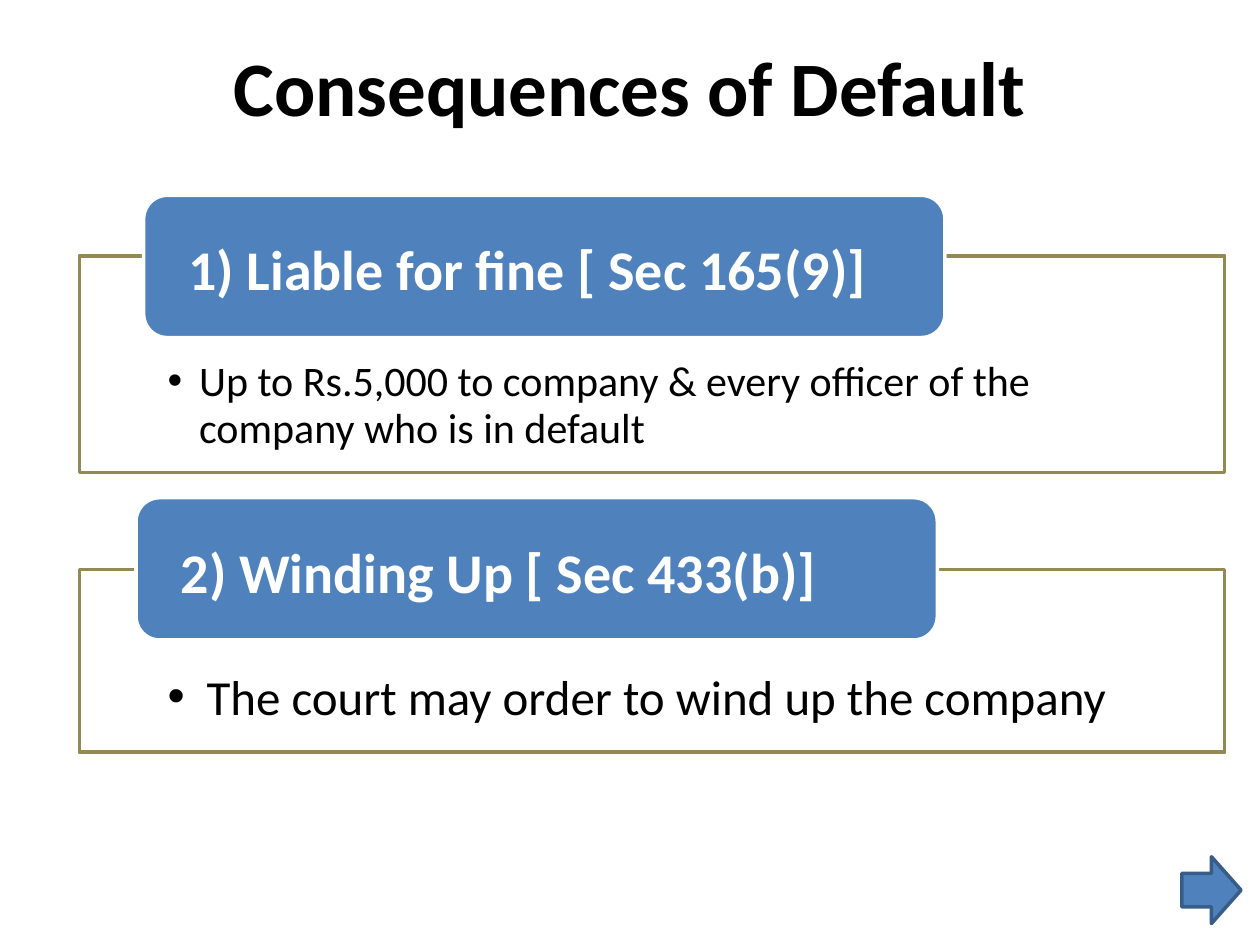
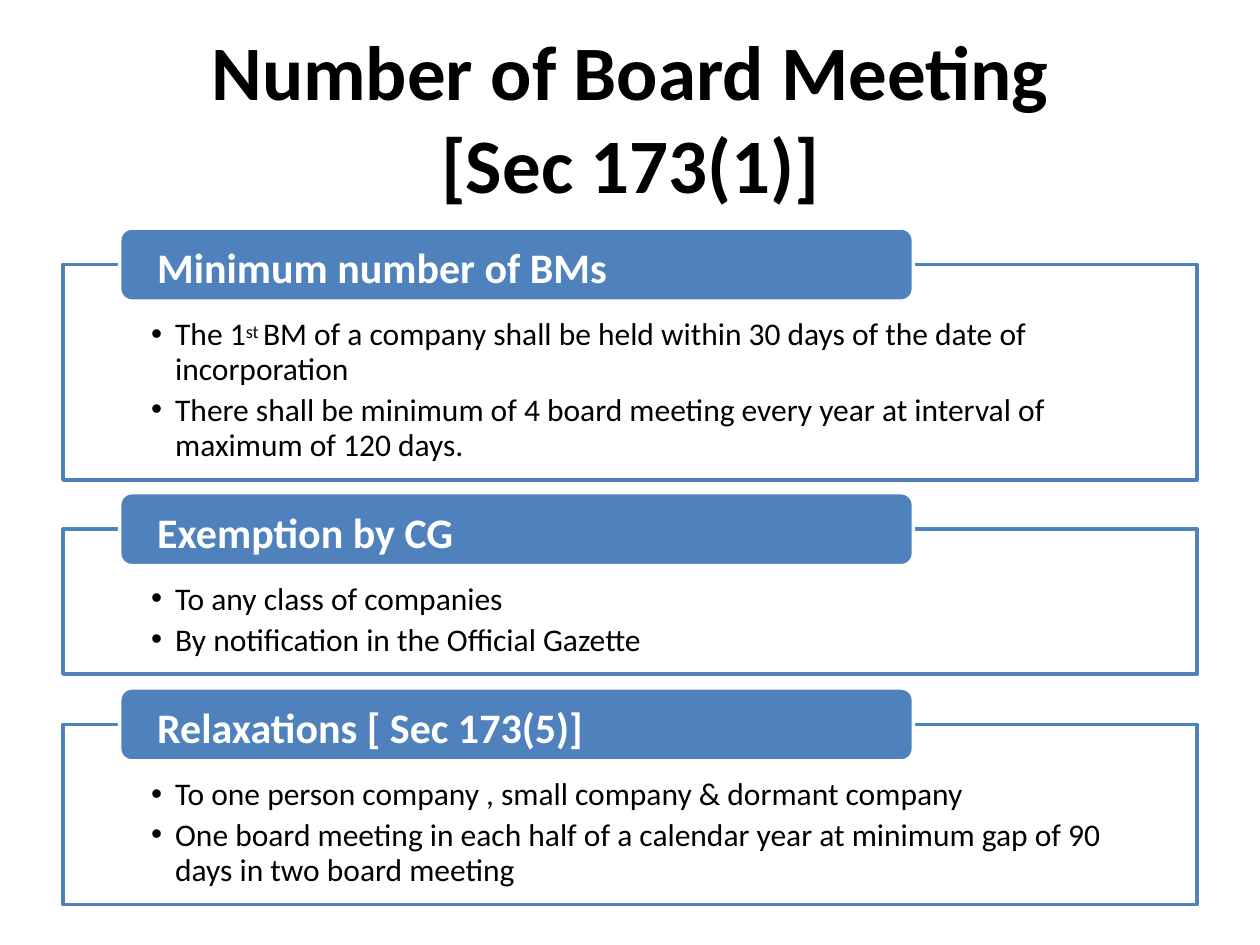
from lxml.etree import SubElement
from pptx import Presentation
from pptx.dml.color import RGBColor
from pptx.enum.shapes import MSO_SHAPE
from pptx.enum.text import MSO_ANCHOR, MSO_AUTO_SIZE, PP_ALIGN
from pptx.oxml.ns import qn
from pptx.util import Inches, Pt

BLUE = "4F81BC"
NAVY = "385D89"
OLIVE = "938953"
WHITE = "FFFFFF"
BLACK = "000000"
FONT = "Calibri"
EDGE = 2.04


def color(code):
    return RGBColor.from_string(code)


def place(shape, left, top, width, height):
    shape.left, shape.top = Inches(left), Inches(top)
    shape.width, shape.height = Inches(width), Inches(height)


def prepare(shape, left=0, top=0):
    frame = shape.text_frame
    frame.word_wrap = True
    frame.auto_size = MSO_AUTO_SIZE.NONE
    frame.vertical_anchor = MSO_ANCHOR.TOP
    frame.margin_left, frame.margin_top = Inches(left), Inches(top)
    frame.margin_right = frame.margin_bottom = 0
    return frame


def write(para, text, size=18, ink=BLACK, bold=False, align=PP_ALIGN.LEFT):
    para.alignment = align
    para.space_before = Pt(0)
    for count, part in enumerate(text.split("^")):
        para.add_line_break() if part == "\v" else None
        run = para.add_run()
        run.text = part
        run.font.name = FONT
        run.font.size = Pt(size)
        run.font.bold = bold
        run.font.color.rgb = color(ink)
        if count % 2:
            run.font._element.set("baseline", "25000")


def bullet(para, indent):
    props = para._p.get_or_add_pPr()
    props.set("marL", str(Inches(indent)))
    props.set("indent", str(-Inches(indent)))
    SubElement(props, qn("a:buFont")).set("typeface", "Arial")
    SubElement(props, qn("a:buChar")).set("char", "•")


def title(slide, lines, box):
    holder = slide.shapes.title
    place(holder, *box)
    frame = prepare(holder)
    for count, line in enumerate(lines):
        para = frame.add_paragraph() if count else frame.paragraphs[0]
        write(para, line, size=44, bold=True, align=PP_ALIGN.CENTER)


def draw(slide, kind, box, fill=None, edge=WHITE):
    shape = slide.shapes.add_shape(kind, *map(Inches, box))
    shape.shadow.inherit = False
    if fill:
        shape.fill.solid()
        shape.fill.fore_color.rgb = color(fill)
    else:
        shape.fill.background()
    shape.line.color.rgb = color(edge)
    shape.line.width = Pt(EDGE)
    return shape


def header(slide, text, box, size, left, top):
    shape = draw(slide, MSO_SHAPE.ROUNDED_RECTANGLE, box, fill=BLUE)
    frame = prepare(shape, left, top)
    write(frame.paragraphs[0], text, size=size, ink=WHITE, bold=True)


def fill_list(holder, items, box, size, indent, pitch):
    place(holder, *box)
    frame = prepare(holder)
    for count, item in enumerate(items):
        para = frame.add_paragraph() if count else frame.paragraphs[0]
        write(para, item, size=size)
        para.space_after = Pt(3.5)
        para.line_spacing = Pt(pitch) if pitch else 1.0
        bullet(para, indent)


def start(deck):
    slide = deck.slides.add_slide(deck.slide_layouts.get_by_name("Comparison"))
    return slide, list(slide.placeholders)[1:]


def discard(holders):
    for holder in holders:
        holder._element.getparent().remove(holder._element)


def default_slide(deck):
    slide, holders = start(deck)
    title(slide, ["Consequences of Default"], (1.84, 0.31, 6.32, 0.76))
    parts = [
        ("1) Liable for fine [ Sec 165(9)]",
         "Up to Rs.5,000 to company & every officer of the company who is in default",
         2.03, 1.72, (1.14, 1.55), 2.85, 24, 0.25, 26.4),
        ("2) Winding Up [ Sec 433(b)]",
         "The court may order to wind up the company",
         4.52, 1.45, (1.08, 3.95), 5.29, 28, 0.31, None),
    ]
    for holder, part in zip(holders, parts):
        head, item, top, height, corner, start_y, size, indent, pitch = part
        draw(slide, MSO_SHAPE.RECTANGLE, (0.63, top, 9.09, height), edge=OLIVE)
        header(slide, head, (*corner, 6.36, 1.13), 32, 0.3, 0.26)
        fill_list(holder, [item], (1.33, start_y, 7.7, 0.8), size, indent, pitch)
    discard(holders[len(parts):])
    draw(slide, MSO_SHAPE.RIGHT_ARROW, (9.38, 6.8, 0.47, 0.53), BLUE, NAVY)


def meeting_slide(deck):
    slide, holders = start(deck)
    title(slide, ["Number of Board Meeting", "[Sec 173(1)]"], (0.91, 0.19, 8.19, 1.5))
    parts = [
        ("Minimum number of BMs", 2.1, 1.71, [
            "The 1^st ^BM of a company shall be held within 30 days of the date of incorporation",
            "There shall be minimum of 4 board meeting every year at interval of maximum of 120 days.",
        ]),
        ("Exemption by CG", 4.2, 1.15, [
            "To any class of companies",
            "By notification in the Official Gazette",
        ]),
        ("Relaxations [ Sec 173(5)]", 5.75, 1.43, [
            "To one person company , small company & dormant company",
            "One board meeting in each half of a calendar year at minimum gap of 90 days in two board meeting",
        ]),
    ]
    for holder, (head, top, height, items) in zip(holders, parts):
        draw(slide, MSO_SHAPE.RECTANGLE, (0.5, top, 9, height), edge=BLUE)
        header(slide, head, (0.95, top - 0.29, 6.3, 0.58), 24, 0.27, 0.08)
        box = (1.2, top + 0.42, 7.7, height - 0.45)
        fill_list(holder, items, box, 18, 0.19, 19.8)
    discard(holders[len(parts):])


def main():
    deck = Presentation()
    deck.slide_width, deck.slide_height = Inches(10), Inches(7.5)
    default_slide(deck)
    meeting_slide(deck)
    deck.save("out.pptx")


if __name__ == "__main__":
    main()
